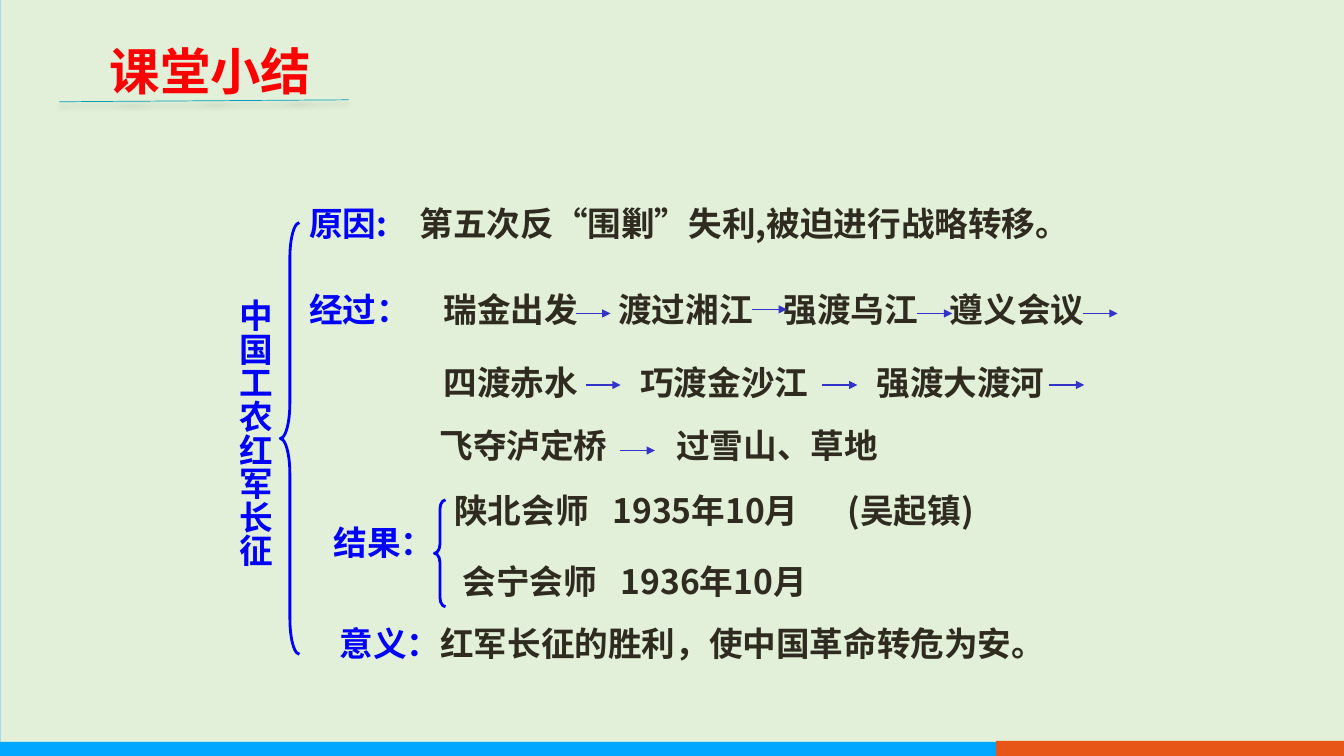
from lxml import etree
from pptx import Presentation, util as u
from pptx.dml.color import RGBColor
from pptx.enum import shapes, text
from pptx.oxml.ns import qn

FONT = "Noto Sans CJK SC"
BLUE, DARK, RED, ARROW = "0000FF", "2F2B20", "FF0000", "3333CC"
LEFT, CENTER = text.PP_ALIGN.LEFT, text.PP_ALIGN.CENTER
ROW_HEIGHT = 36

BANDS = [
    (0.7, 0, 960, 543.6, "E2F0D9"),
    (0, 529.9, 711.4, 14.4, "00A7FF"),
    (711.4, 529.2, 249.1, 14.4, "E75617"),
]
NOTES = [
    (235.4, 441.4, 525.6, [("意义：", BLUE), ("红军长征的胜利，使中国革命转危为安。", DARK)], []),
    (317.4, 346.3, 435, [("陕北会师\t1935年10月\t(吴起镇)", DARK)], [113, 281]),
    (323.3, 397.4, 282, [("会宁会师\t1936年10月", DARK)], [113]),
    (213.8, 141.1, 579, [("原因:\t", BLUE), ("第五次反“围剿”失利,被迫进行战略转移。", DARK)], [79]),
    (231.1, 369.4, 124, [("结果：", BLUE)], []),
    (213.8, 203, 111.6, [("经过：", BLUE)], []),
]
STAGES = [
    (203, [("瑞金出发", 299.5, 131), ("渡过湘江", 424.1, 131),
           ("强渡乌江", 542.2, 131), ("遵义会议", 661, 131)]),
    (254.9, [("四渡赤水", 299.5, 131), ("巧渡金沙江", 436.3, 162), ("强渡大渡河", 604.8, 162.7)]),
    (300.2, [("飞夺泸定桥", 293, 162), ("过雪山、草地", 472.3, 165.6)]),
]
ARROW_LENGTH = 25
ARROWS = [
    (223.9, [411.1, 655.2, 773.3]),
    (221, [537.1]),
    (275, [418.3, 587.5, 749.5]),
    (321.8, [442.8]),
]
BRACES = [(310.3, 357.1, 7.9, 76.3, 0.82), (200.2, 159.1, 13.7, 308.2, 1.84)]


def color(value):
    return RGBColor.from_string(value)


def points(*lengths):
    return [u.Pt(length) for length in lengths]


def add_text(page, left, top, width, height, spans, tabs=(), size=24,
             align=LEFT, wrap=True, vertical=False):
    box = page.shapes.add_textbox(*points(left, top, width, height))
    frame = box.text_frame
    frame.word_wrap = wrap
    if vertical:
        frame._txBody.bodyPr.set("vert", "eaVert")
    para = frame.paragraphs[0]
    para.alignment = align
    if tabs:
        stops = etree.SubElement(para._p.get_or_add_pPr(), qn("a:tabLst"))
        for position in tabs:
            etree.SubElement(stops, qn("a:tab"), pos=str(u.Pt(position)), algn="l")
    para.font.size = u.Pt(size)
    para.font.bold = True
    para.font.name = FONT
    if len(spans) == 1:
        para.font.color.rgb = color(spans[0][1])
    etree.SubElement(para.font._element, qn("a:ea"), typeface=FONT)
    for words, ink in spans:
        span = para.add_run()
        span.text = words
        if len(spans) > 1:
            span.font.color.rgb = color(ink)


def add_line(page, start, end, ink, width):
    line = page.shapes.add_connector(shapes.MSO_CONNECTOR.STRAIGHT, *points(*start, *end))
    line.line.color.rgb = color(ink)
    line.line.width = u.Pt(width)
    effects = etree.SubElement(line._element.spPr, qn("a:effectLst"))
    return line, effects


def add_arrow(page, left, top):
    arrow, _ = add_line(page, (left, top), (left + ARROW_LENGTH, top), ARROW, 1)
    etree.SubElement(arrow.line._get_or_add_ln(), qn("a:tailEnd"), type="triangle")


def add_band(page, left, top, width, height, fill):
    band = page.shapes.add_shape(shapes.MSO_SHAPE.RECTANGLE, *points(left, top, width, height))
    band.shadow.inherit = False
    band.fill.solid()
    band.fill.fore_color.rgb = color(fill)
    band.line.fill.background()


def add_brace(page, left, top, width, height, curve):
    brace = page.shapes.add_shape(shapes.MSO_SHAPE.LEFT_BRACE, *points(left, top, width, height))
    brace.shadow.inherit = False
    brace.adjustments[0] = curve
    brace.fill.background()
    brace.line.color.rgb = color(BLUE)
    brace.line.width = u.Pt(2)


def add_title(page):
    add_text(page, 71.3, 25.2, 159.8, 51, [("课堂小结", RED)], size=36, wrap=False)
    _, effects = add_line(page, (42.5, 72.7), (249.1, 71.3), "009FB9", 0.5)
    shadow = etree.SubElement(effects, qn("a:outerShdw"), blurRad=str(u.Pt(4)),
                              dist=str(u.Pt(3)), dir="5400000", rotWithShape="0")
    shade = etree.SubElement(shadow, qn("a:srgbClr"), val="000000")
    etree.SubElement(shade, qn("a:alpha"), val="40000")


def main():
    deck = Presentation()
    deck.slide_width, deck.slide_height = points(960, 540)
    page = deck.slides.add_slide(deck.slide_layouts[6])
    page.background.fill.solid()
    page.background.fill.fore_color.rgb = color("9DDAEE")
    for band in BANDS:
        add_band(page, *band)
    for left, top, width, spans, tabs in NOTES:
        add_text(page, left, top, width, ROW_HEIGHT, spans, tabs)
    for top, stages in STAGES:
        for words, left, width in stages:
            add_text(page, left, top, width, ROW_HEIGHT, [(words, DARK)], align=CENTER)
    for top, lefts in ARROWS:
        for left in lefts:
            add_arrow(page, left, top)
    for brace in BRACES:
        add_brace(page, *brace)
    add_text(page, 157, 206.6, 43.2, 219.6, [("中国工农红军长征", BLUE)],
             align=CENTER, vertical=True)
    add_title(page)
    deck.save("out.pptx")


if __name__ == "__main__":
    main()
